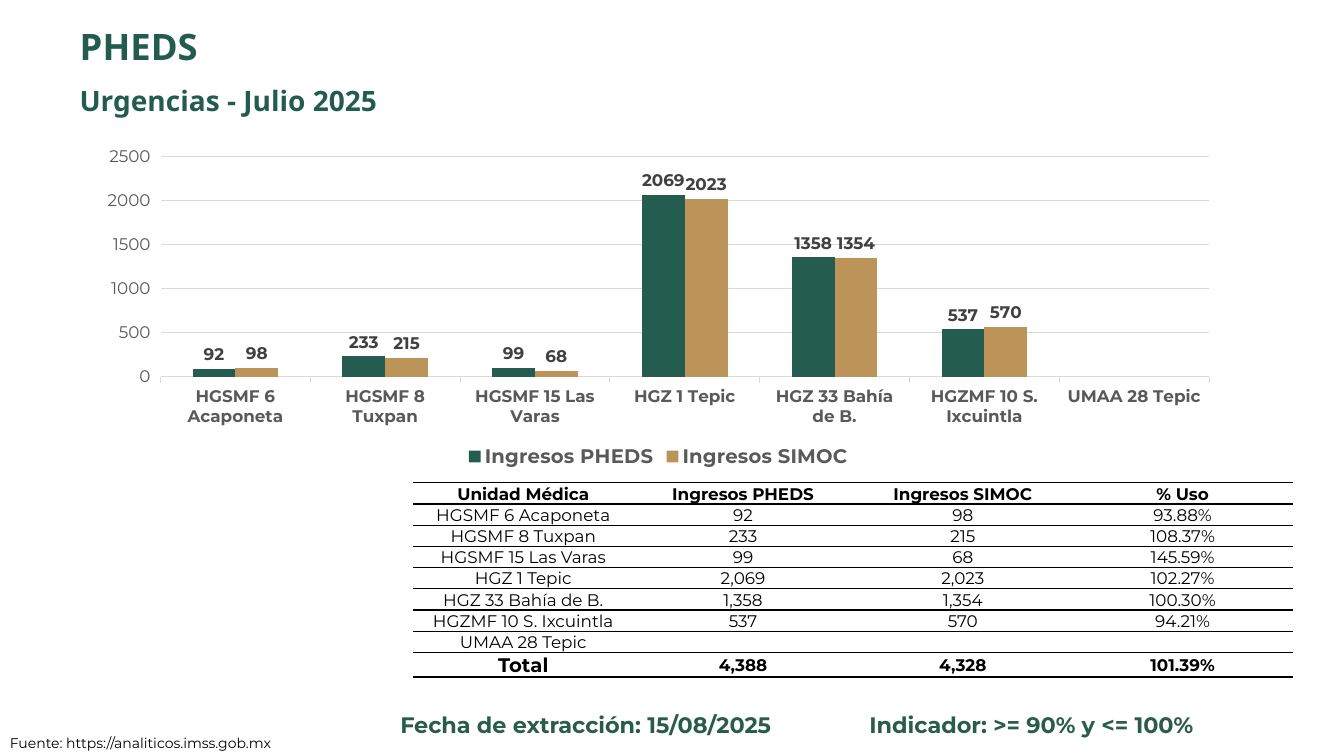
from lxml.etree import SubElement
from pptx import Presentation
from pptx.chart.data import CategoryChartData
from pptx.dml.color import RGBColor
from pptx.enum.chart import XL_CHART_TYPE as ChartType, XL_LABEL_POSITION as LabelPosition
from pptx.enum.chart import XL_LEGEND_POSITION as LegendPosition, XL_TICK_MARK as TickMark
from pptx.enum.text import MSO_ANCHOR as Anchor, MSO_AUTO_SIZE as AutoSize, PP_ALIGN as Align
from pptx.oxml import parse_xml
from pptx.oxml.ns import nsdecls, qn
from pptx.util import Inches, Pt

# Content
TITLE = "PHEDS"
SUBTITLE = "Urgencias - Julio 2025"
SOURCE = "Fuente: https://analiticos.imss.gob.mx"
# text, left, width
FOOTNOTES = [
    ("Fecha de extracción: 15/08/2025", 3.29, 5.04),
    ("Indicador: >= 90% y <= 100%", 7.34, 5.78),
]
SERIES = [("Ingresos PHEDS", "245C4F"), ("Ingresos SIMOC", "BC945A")]
# unit, PHEDS admissions, SIMOC admissions, share of use
UNITS = [
    ("HGSMF 6 Acaponeta", 92, 98, "93.88%"),
    ("HGSMF 8 Tuxpan", 233, 215, "108.37%"),
    ("HGSMF 15 Las Varas", 99, 68, "145.59%"),
    ("HGZ 1 Tepic", 2069, 2023, "102.27%"),
    ("HGZ 33 Bahía de B.", 1358, 1354, "100.30%"),
    ("HGZMF 10 S. Ixcuintla", 537, 570, "94.21%"),
    ("UMAA 28 Tepic", None, None, ""),
]
HEADER = ("Unidad Médica", "Ingresos PHEDS", "Ingresos SIMOC", "% Uso")
TOTAL = ("Total", 4388, 4328, "101.39%")

FONT, TITLE_FONT = "Montserrat", "Noto Sans"
GREEN, NOTE_GREEN, GRAY, GRID, BLACK = "235C4F", "2A5C4B", "595959", "D9D9D9", "000000"
COLUMN_WIDTH, ROW_HEIGHT, TOTAL_HEIGHT = 2.18, 0.21, 0.24


def rgb(value):
    return RGBColor.from_string(value)


def style_font(font, size=12, color=BLACK, bold=False, name=FONT):
    font.size, font.bold, font.name = Pt(size), bold, name
    font.color.rgb = rgb(color)


def write(frame, text, align=Align.LEFT, spacing=None, **style):
    para = frame.paragraphs[0]
    para.alignment = align
    if spacing:
        para.line_spacing = spacing
    if text:
        span = para.add_run()
        span.text = text
        style_font(span.font, **style)
    else:
        SubElement(para._p, qn("a:endParaRPr"), sz="1200")


def add_text(page, text, left, top, width, height, wrap=True, **style):
    box = page.shapes.add_textbox(*map(Inches, (left, top, width, height)))
    box.text_frame.word_wrap = wrap
    write(box.text_frame, text, **style)
    return box


def rule_cell(cell):
    for index, side in enumerate(("lnT", "lnB")):
        cell._tc.get_or_add_tcPr().insert(index, parse_xml(
            f'<a:{side} {nsdecls("a")} w="12700"><a:solidFill>'
            f'<a:srgbClr val="{BLACK}"/></a:solidFill></a:{side}>'))


def add_chart(page):
    data = CategoryChartData()
    data.categories = [unit[0] for unit in UNITS]
    for column, (name, _) in enumerate(SERIES, 1):
        data.add_series(name, [unit[column] for unit in UNITS])
    area = map(Inches, (0.84, 1.39, 11.38, 3.3))
    chart = page.shapes.add_chart(ChartType.COLUMN_CLUSTERED, *area, data).chart
    style_font(chart.font, size=10)
    chart.has_title = False
    chart.has_legend = True
    chart.legend.position = LegendPosition.BOTTOM
    chart.legend.include_in_layout = False
    style_font(chart.legend.font, size=14, color=GRAY, bold=True)

    # Columns and their labels
    plot = chart.plots[0]
    plot.gap_width, plot.overlap, plot.vary_by_categories = 150, 0, False
    for series, (_, color) in zip(plot.series, SERIES):
        series.format.fill.solid()
        series.format.fill.fore_color.rgb = rgb(color)
        labels = series.data_labels
        labels.show_value = True
        labels.position = LabelPosition.OUTSIDE_END
        style_font(labels.font, color="404040", bold=True)

    # Axes
    units, counts = chart.category_axis, chart.value_axis
    counts.minimum_scale, counts.maximum_scale, counts.major_unit = 0, 2500, 500
    counts.format.line.fill.background()
    for axis, bold in ((units, True), (counts, False)):
        axis.major_tick_mark = TickMark.OUTSIDE
        style_font(axis.tick_labels.font, color=GRAY, bold=bold)
    for line in (units.format.line, counts.major_gridlines.format.line):
        line.color.rgb = rgb(GRID)
        line.width = Pt(0.75)


def add_table(page):
    rows = [HEADER, *UNITS, TOTAL]
    last = len(rows) - 1
    area = map(Inches, (4.1, 4.79, COLUMN_WIDTH * len(HEADER), ROW_HEIGHT * last + TOTAL_HEIGHT))
    table = page.shapes.add_table(len(rows), len(HEADER), *area).table
    table.first_row = table.horz_banding = False
    # The "no style, no grid" table style
    table._tbl.tblPr.find(qn("a:tableStyleId")).text = "{2D5ABB26-0587-4C30-8999-92F81FD0307C}"
    for row, values in enumerate(rows):
        table.rows[row].height = Inches(TOTAL_HEIGHT if row == last else ROW_HEIGHT)
        for column, value in enumerate(values):
            cell = table.cell(row, column)
            cell.margin_left = cell.margin_right = cell.margin_top = Inches(0.01)
            cell.margin_bottom = 0
            is_unit = column == 0 and 0 < row < last
            cell.vertical_anchor = Anchor.TOP if is_unit else Anchor.MIDDLE
            text = f"{value:,}" if isinstance(value, int) else value
            write(cell.text_frame, text, align=Align.CENTER, bold=row in (0, last),
                  size=14 if (row, column) == (last, 0) else 12)
            cell.fill.background()
            rule_cell(cell)


def main():
    deck = Presentation()
    deck.slide_width, deck.slide_height = Inches(13.33), Inches(7.5)
    page = deck.slides.add_slide(deck.slide_layouts[5])

    # Headings
    heading = dict(color=GREEN, bold=True, name=TITLE_FONT, spacing=0.9)
    title = page.shapes.title
    title.left, title.top, title.width, title.height = map(Inches, (0.69, 0.24, 9.48, 0.49))
    title.text_frame.vertical_anchor = Anchor.TOP
    title.text_frame.auto_size = AutoSize.NONE
    write(title.text_frame, TITLE, size=26, **heading)
    add_text(page, SUBTITLE, 0.69, 0.82, 9.48, 0.49, size=20, **heading)

    # Data
    add_table(page)
    add_chart(page)

    # Notes at the foot
    add_text(page, SOURCE, 0, 7.24, 2.92, 0.27, wrap=False, size=10)
    for text, left, width in FOOTNOTES:
        add_text(page, text, left, 7.01, width, 0.37, align=Align.CENTER,
                 size=16, color=NOTE_GREEN, bold=True)

    deck.save("out.pptx")


if __name__ == "__main__":
    main()
